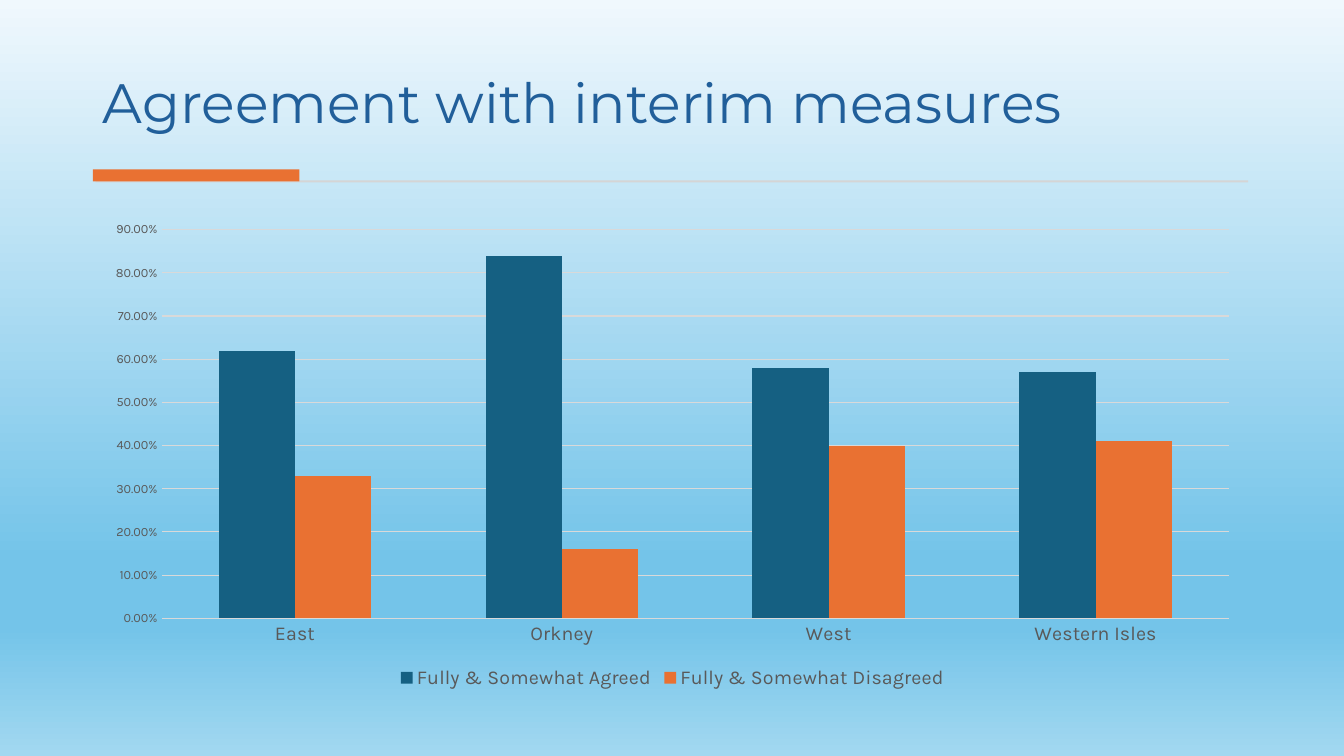
from lxml import etree
from pptx import Presentation
from pptx.chart.data import CategoryChartData
from pptx.dml.color import RGBColor
from pptx.enum.chart import XL_CHART_TYPE, XL_LEGEND_POSITION, XL_TICK_MARK
from pptx.enum.shapes import MSO_SHAPE
from pptx.enum.text import MSO_ANCHOR
from pptx.oxml.ns import qn
from pptx.util import Pt

COLUMNS = XL_CHART_TYPE.COLUMN_CLUSTERED
LEGEND_BOTTOM = XL_LEGEND_POSITION.BOTTOM
NO_TICK = XL_TICK_MARK.NONE
RECTANGLE = MSO_SHAPE.RECTANGLE
BOTTOM = MSO_ANCHOR.BOTTOM

EMU_PER_PX = 9144  # 100 px to the inch
SLIDE_SIZE = (1333, 750)
TITLE_BOX = (92, 28, 1149, 111)
RULE_BOX = (92, 168, 1146, 13)
CHART_BOX = (92, 211, 1150, 477)

ORANGE, GREY = "E97132", "595959"
SKY_STOPS = [(0, "F0F8FD"), (74, "74C4E9"), (83, "74C4E9"), (100, "A2D8F0")]
REGIONS = ["East", "Orkney", "West", "Western Isles"]
ANSWERS = [
    ("Fully & Somewhat Agreed", "156082", [0.62, 0.84, 0.58, 0.57]),
    ("Fully & Somewhat Disagreed", ORANGE, [0.33, 0.16, 0.40, 0.41]),
]


def px(*lengths):
    return [length * EMU_PER_PX for length in lengths]


def color(hex_string):
    return RGBColor.from_string(hex_string)


def set_format(target, values):
    for name, value in values.items():
        setattr(target, name, value)


def set_font(font, size, hex_string, name="Karla"):
    set_format(font, {"size": Pt(size), "name": name, "bold": False})
    font.color.rgb = color(hex_string)


def paint_background(page):
    fill = page.background.fill
    fill.gradient()
    fill.gradient_angle = 270
    stops = next(page.element.iter(qn("a:gsLst")))
    for stop in list(stops):
        stops.remove(stop)
    for percent, hex_string in SKY_STOPS:
        stop = etree.SubElement(stops, qn("a:gs"), pos=str(percent * 1000))
        etree.SubElement(stop, qn("a:srgbClr"), val=hex_string)


def add_title(page, box, text):
    frame = page.shapes.add_textbox(*px(*box)).text_frame
    set_format(frame, {"word_wrap": True, "vertical_anchor": BOTTOM})
    para = frame.paragraphs[0]
    para.line_spacing = 0.9
    span = para.add_run()
    span.text = text
    set_font(span.font, 39.6, "215F9A", "Montserrat")


def add_bar(page, box, hex_string):
    bar = page.shapes.add_shape(RECTANGLE, *px(*box))
    bar.shadow.inherit = False
    bar.fill.solid()
    bar.fill.fore_color.rgb = color(hex_string)
    bar.line.fill.background()


def add_title_rule(page, box):
    left, top, width, height = box
    thin, accent_width = 2, 205
    add_bar(page, (left + 3, top + height - thin, width - 3, thin), "D5D5D5")
    add_bar(page, (left, top, accent_width, height - 1), ORANGE)


def style_axis(axis, size):
    set_format(axis, {"major_tick_mark": NO_TICK, "minor_tick_mark": NO_TICK})
    axis.format.line.fill.background()
    set_font(axis.tick_labels.font, size, GREY)


def add_agreement_chart(page, box):
    data = CategoryChartData(number_format="0.00%")
    data.categories = REGIONS
    for name, _, shares in ANSWERS:
        data.add_series(name, shares)
    chart = page.shapes.add_chart(COLUMNS, *px(*box), data).chart
    set_format(chart, {"has_title": False, "has_legend": True})
    set_font(chart.font, 10, "000000")

    # Columns
    plot = chart.plots[0]
    set_format(plot, {"gap_width": 150, "overlap": 0, "vary_by_categories": False})
    for series, (_, hex_string, _) in zip(plot.series, ANSWERS):
        series.format.fill.solid()
        series.format.fill.fore_color.rgb = color(hex_string)

    # Axes and gridlines
    style_axis(chart.category_axis, 14)
    shares_axis = chart.value_axis
    style_axis(shares_axis, 9)
    set_format(shares_axis, {"minimum_scale": 0, "maximum_scale": 0.9,
                             "major_unit": 0.1, "has_major_gridlines": True})
    set_format(shares_axis.tick_labels, {"number_format": "0.00%",
                                         "number_format_is_linked": False})
    grid = shares_axis.major_gridlines.format.line
    grid.width = Pt(0.75)
    grid.color.rgb = color("D9D9D9")

    # Legend
    set_format(chart.legend, {"position": LEGEND_BOTTOM, "include_in_layout": False})
    set_font(chart.legend.font, 14, GREY)


def main():
    deck = Presentation()
    deck.slide_width, deck.slide_height = px(*SLIDE_SIZE)
    page = deck.slides.add_slide(deck.slide_layouts[6])
    paint_background(page)
    add_title(page, TITLE_BOX, "Agreement with interim measures")
    add_title_rule(page, RULE_BOX)
    add_agreement_chart(page, CHART_BOX)
    deck.save("out.pptx")


if __name__ == "__main__":
    main()
